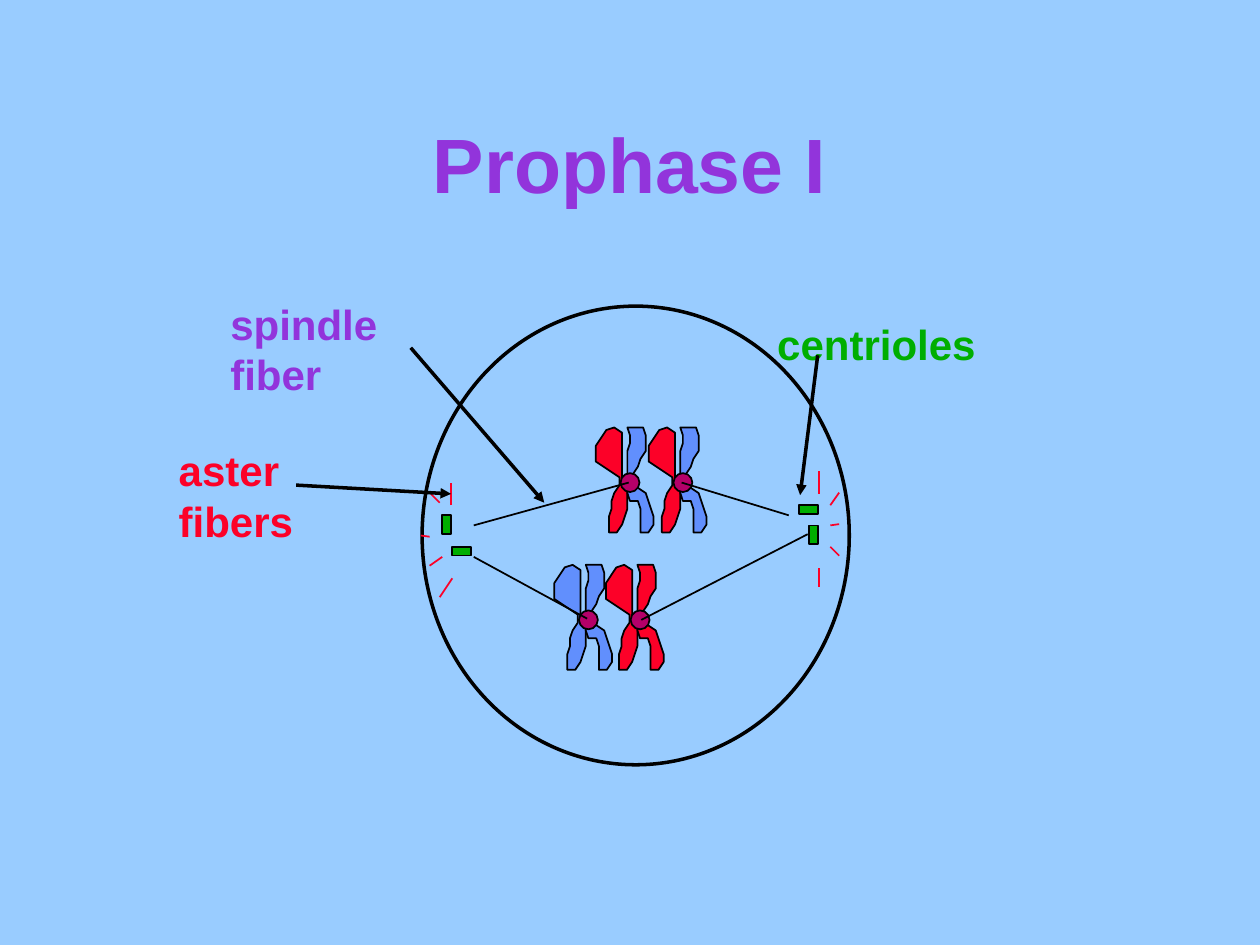
"""Build the Prophase I slide: a cell with spindle, asters, centrioles and paired chromosomes."""
from lxml import etree
from pptx import Presentation
from pptx import util as u
from pptx.dml.color import RGBColor
from pptx.enum import shapes, text
from pptx.oxml.ns import qn

SKY = RGBColor(0x99, 0xCC, 0xFF)
BLACK = RGBColor(0, 0, 0)
PURPLE = RGBColor(0x92, 0x34, 0xDB)
GREEN = RGBColor(0, 0xAE, 0)
RED = RGBColor(0xFC, 0x01, 0x28)
BLUE = RGBColor(0x61, 0x8F, 0xFD)
MAGENTA = RGBColor(0xB5, 0, 0x69)

TITLE = "Prophase I"
LABELS = [
    (["centrioles"], (6.07, 2.48, 1.85, 0.5), GREEN),
    (["spindle fiber"], (1.73, 2.32, 2.1, 0.5), PURPLE),
    (["aster", "fibers"], (1.32, 3.48, 1.15, 0.9), RED),
]
CELL = (3.35, 2.43, 3.39, 3.64)
LONG, SHORT = 0.15, 0.07
UPRIGHT_CENTRIOLES = [(6.42, 4.17), (3.51, 4.09)]
FLAT_CENTRIOLES = [(6.34, 4.01), (3.59, 4.34)]
ASTER_FIBERS = [
    (3.59, 4.59, 3.49, 4.74), (3.51, 4.42, 3.41, 4.49), (3.34, 4.25, 3.41, 4.26),
    (3.42, 3.92, 3.49, 3.99), (3.58, 4.01, 3.58, 3.83),
    (6.5, 3.92, 6.5, 3.74), (6.59, 4.01, 6.66, 3.91), (6.59, 4.17, 6.66, 4.16),
    (6.59, 4.34, 6.66, 4.41), (6.5, 4.51, 6.5, 4.66),
]
SPINDLE_FIBERS = [
    (3.76, 4.17, 4.99, 3.83), (6.26, 4.09, 5.41, 3.83),
    (5.09, 4.92, 6.41, 4.24), (3.76, 4.42, 4.66, 4.91),
]
POINTERS = [(2.35, 3.85, 3.58, 3.92), (3.26, 2.76, 4.32, 3.99), (6.49, 2.82, 6.35, 3.93)]
CHROMOSOMES = [
    (4.67, 4.92, BLUE, BLUE), (5.42, 3.83, RED, BLUE),
    (5, 3.83, RED, BLUE), (5.08, 4.92, RED, RED),
]
UNITS_PER_INCH = 48
LEFT_CHROMATID = [
    (0, 0), (-3, -1), (-3, -19), (-6, -21), (-9, -20), (-11, -17), (-13, -14),
    (-13, -8), (-10, -6), (-7, -4), (-4, -2), (-4, 1), (-6, 4), (-7, 7), (-7, 10),
    (-8, 13), (-8, 19), (-5, 19), (-3, 16), (-2, 13), (-1, 10), (-1, 1),
]
RIGHT_CHROMATID = [
    (0, 0), (-1, -3), (-1, -12), (0, -15), (0, -18), (-1, -21), (5, -21), (6, -18),
    (6, -12), (4, -9), (3, -6), (1, -3), (0, 0), (3, 2), (6, 4), (7, 7), (8, 10),
    (9, 13), (9, 16), (7, 19), (4, 19), (4, 10), (3, 7), (0, 7), (-1, 4), (-1, 1),
]


def inches(values):
    return [u.Inches(value) for value in values]


def paint(shape, fill, weight=1):
    shape.shadow.inherit = False
    shape.fill.solid()
    shape.fill.fore_color.rgb = fill
    shape.line.color.rgb = BLACK
    shape.line.width = u.Pt(weight)


def add_preset(page, kind, area, fill, weight=1):
    paint(page.shapes.add_shape(kind, *inches(area)), fill, weight)


def add_line(page, ends, color=BLACK, weight=1, arrow=False):
    line = page.shapes.add_connector(shapes.MSO_CONNECTOR.STRAIGHT, *inches(ends))
    line.line.color.rgb = color
    line.line.width = u.Pt(weight)
    if arrow:
        etree.SubElement(line.line._get_or_add_ln(), qn("a:tailEnd"), type="triangle")
    etree.SubElement(line._element.spPr, qn("a:effectLst"))


def add_chromosome(page, x, y, left_fill, right_fill):
    for outline, fill in ((LEFT_CHROMATID, left_fill), (RIGHT_CHROMATID, right_fill)):
        builder = page.shapes.build_freeform(*outline[0], scale=u.Inches(1) / UNITS_PER_INCH)
        builder.add_line_segments(outline[1:], close=True)
        paint(builder.convert_to_shape(*inches((x, y))), fill)
    centromere = (x - LONG / 2, y - LONG / 2, LONG, LONG)
    add_preset(page, shapes.MSO_SHAPE.OVAL, centromere, MAGENTA)


def write(frame, lines, size=24, color=BLACK, align=text.PP_ALIGN.LEFT,
          anchor=text.MSO_ANCHOR.TOP):
    frame.word_wrap = True
    frame.vertical_anchor = anchor
    for index, line in enumerate(lines):
        para = frame.add_paragraph() if index else frame.paragraphs[0]
        para.alignment = align
        span = para.add_run()
        span.text = line
        span.font.name = "Arial"
        span.font.size = u.Pt(size)
        span.font.bold = True
        span.font.color.rgb = color


def main():
    deck = Presentation()
    deck.slide_width, deck.slide_height = inches((10, 7.5))
    page = deck.slides.add_slide(deck.slide_layouts.get_by_name("Title Only"))
    page.background.fill.solid()
    page.background.fill.fore_color.rgb = SKY

    title = page.shapes.title
    title.left, title.top, title.width, title.height = inches((0.75, 0.67, 8.5, 1.25))
    write(title.text_frame, [TITLE], size=44, color=PURPLE,
          align=text.PP_ALIGN.CENTER, anchor=text.MSO_ANCHOR.MIDDLE)

    add_preset(page, shapes.MSO_SHAPE.OVAL, CELL, SKY, weight=2)
    for corners, size in ((UPRIGHT_CENTRIOLES, (SHORT, LONG)), (FLAT_CENTRIOLES, (LONG, SHORT))):
        for corner in corners:
            add_preset(page, shapes.MSO_SHAPE.RECTANGLE, corner + size, GREEN)
    for lines, area, color in LABELS:
        box = page.shapes.add_textbox(*inches(area))
        write(box.text_frame, lines, color=color)
    for ends in ASTER_FIBERS:
        add_line(page, ends, color=RED)
    for chromosome in CHROMOSOMES:
        add_chromosome(page, *chromosome)
    for ends in SPINDLE_FIBERS:
        add_line(page, ends)
    for ends in POINTERS:
        add_line(page, ends, weight=2, arrow=True)
    deck.save("out.pptx")


if __name__ == "__main__":
    main()
